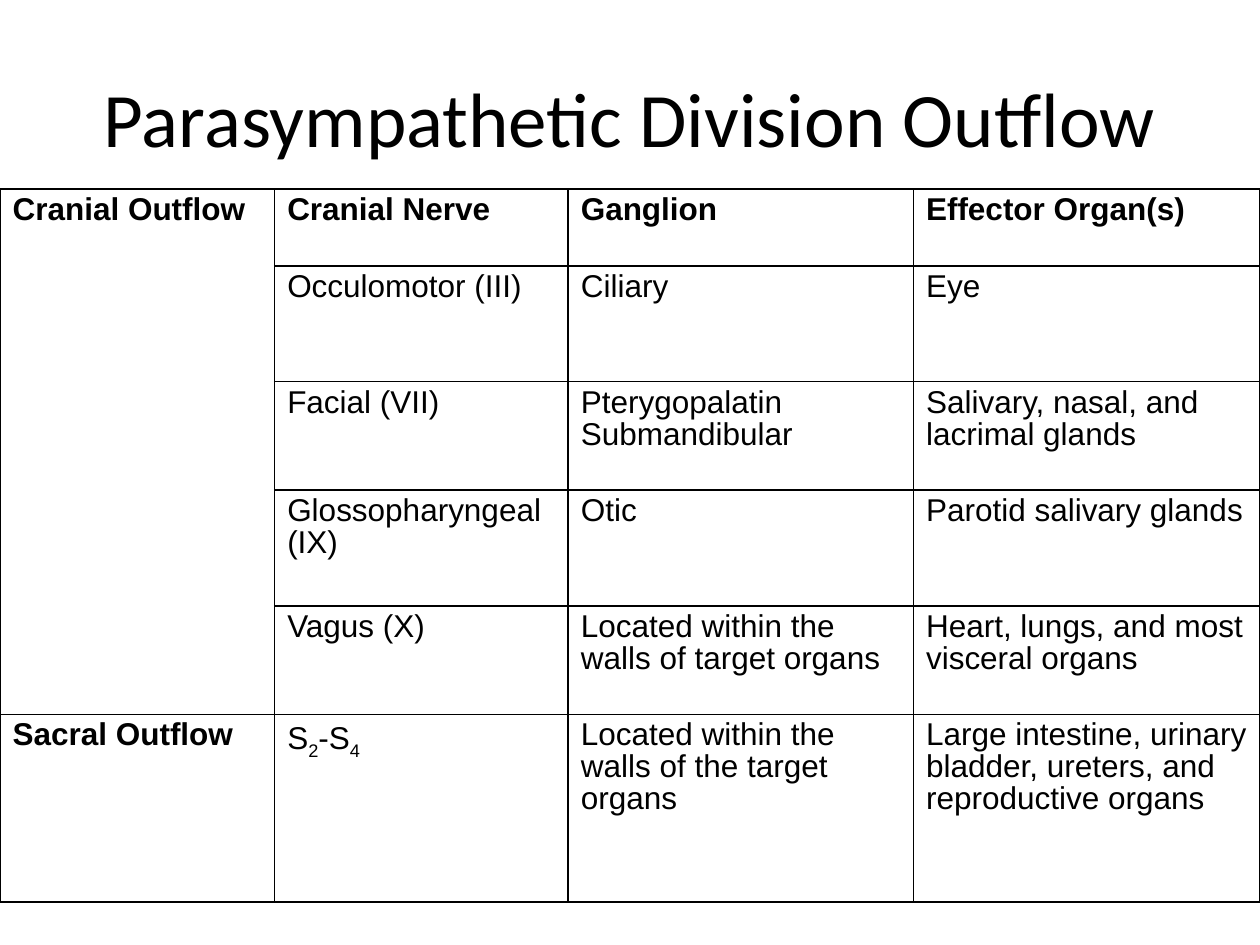
from dataclasses import dataclass

from lxml.etree import SubElement as Sub
from pptx import Presentation as Deck
from pptx.dml.color import RGBColor as RGB
from pptx.enum.text import MSO_ANCHOR as Anchor, PP_ALIGN as Align
from pptx.oxml import parse_xml
from pptx.oxml.ns import nsdecls, qn
from pptx.util import Inches, Pt


@dataclass(frozen=True)
class Theme:
    ink: str = "000000"
    head: str = "Calibri"
    body: str = "Arial"
    big: int = 44
    small: int = 18
    rule: int = 1


THEME = Theme()

WIDTHS = (2.18, 2.33, 2.74, 2.75)
HEIGHTS = (0.61, 0.92, 0.86, 0.92, 0.86, 1.49)

# A tuple alternates plain text and subscripts
ROWS = (
    ("Cranial Outflow", "Cranial Nerve", "Ganglion", "Effector Organ(s)"),
    ("", "Occulomotor (III)", "Ciliary", "Eye"),
    ("", "Facial (VII)", "Pterygopalatin\vSubmandibular",
     "Salivary, nasal, and lacrimal glands"),
    ("", "Glossopharyngeal (IX)", "Otic", "Parotid salivary glands"),
    ("", "Vagus (X)", "Located within the walls of target organs",
     "Heart, lungs, and most visceral organs"),
    ("Sacral Outflow", ("S", "2", "-S", "4"),
     "Located within the walls of the target organs",
     "Large intestine, urinary bladder, ureters, and reproductive organs"),
)


def style(run, face, size, bold=False):
    font = run.font
    font.name, font.size, font.bold = face, Pt(size), bold
    font.color.rgb = RGB.from_string(THEME.ink)


def add_title(slide, box, text):
    title = slide.shapes.title
    title.left, title.top, title.width, title.height = map(Inches, box)
    frame = title.text_frame
    frame.text = text
    frame.vertical_anchor = Anchor.MIDDLE
    para = frame.paragraphs[0]
    para.alignment = Align.CENTER
    style(para.runs[0], THEME.head, THEME.big)


def add_rules(cell):
    # Four solid borders, placed ahead of the fill
    props = cell._tc.get_or_add_tcPr()
    for i, side in enumerate("LRTB"):
        props.insert(i, parse_xml(
            f'<a:ln{side} {nsdecls("a")} w="{Pt(THEME.rule)}"><a:solidFill>'
            f'<a:srgbClr val="{THEME.ink}"/></a:solidFill></a:ln{side}>'))


def fill_cell(cell, value, bold):
    cell.fill.background()
    add_rules(cell)
    if not value:
        return
    parts = value if isinstance(value, tuple) else (value,)
    para = cell.text_frame.paragraphs[0]
    para.text = parts[0]
    for part in parts[1:]:
        para.add_run().text = part
    para.line_spacing = 0.9
    # Space before as a share of the type size
    gap = Sub(para._p.get_or_add_pPr(), qn("a:spcBef"))
    Sub(gap, qn("a:spcPct"), val="20000")
    for run in para.runs:
        style(run, THEME.body, THEME.small, bold)
    for run in para.runs[1::2] if len(parts) > 1 else ():
        run.font._element.set("baseline", "-25000")


def add_grid(slide, box, rows):
    frame = slide.shapes.add_table(len(rows), len(WIDTHS), *map(Inches, box))
    table = frame.table
    table.first_row = table.horz_banding = False
    for col, width in zip(table.columns, WIDTHS):
        col.width = Inches(width)
    for row, height in zip(table.rows, HEIGHTS):
        row.height = Inches(height)
    for r, row in enumerate(rows):
        for c, value in enumerate(row):
            fill_cell(table.cell(r, c), value, bold=r == 0 or c == 0)
    # Cranial Outflow spans all rows above the sacral one
    table.cell(0, 0).merge(table.cell(len(rows) - 2, 0))


def main():
    deck = Deck()
    deck.slide_width, deck.slide_height = Inches(10), Inches(7.5)
    slide = deck.slides.add_slide(deck.slide_layouts[5])
    add_title(slide, (0.5, 0.3, 9, 1.25), "Parasympathetic Division Outflow")
    add_grid(slide, (0, 1.5, sum(WIDTHS), sum(HEIGHTS)), ROWS)
    deck.save("out.pptx")


if __name__ == "__main__":
    main()
